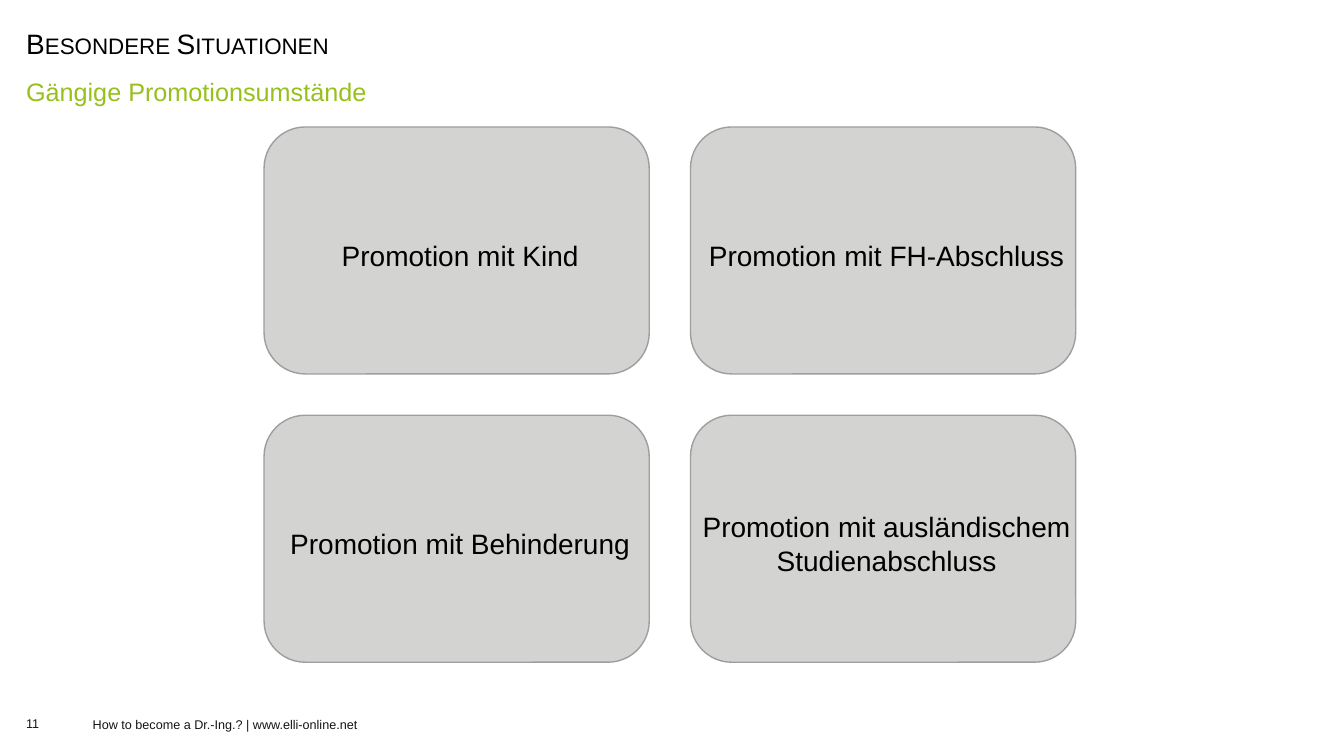
from dataclasses import dataclass

from pptx import Presentation
from pptx import util as u
from pptx.dml.color import RGBColor
from pptx.enum import shapes, text

WIDTH, HEIGHT = u.Inches(13.33), u.Inches(7.5)
FONT = "Arial"
BLACK, INK, GREEN = "000000", "141616", "98C01C"
CARD_FILL, CARD_LINE = "D3D3D1", "9C9E9F"


@dataclass(frozen=True)
class Area:
    """A rectangle in percent of the slide's width and height."""

    left: float
    top: float
    width: float
    height: float

    def lengths(self) -> tuple[int, int, int, int]:
        """Return the left, top, width and height as slide lengths."""
        return (
            round(WIDTH * self.left / 100),
            round(HEIGHT * self.top / 100),
            round(WIDTH * self.width / 100),
            round(HEIGHT * self.height / 100),
        )


@dataclass(frozen=True)
class Card:
    """A situation and its cell in the card grid."""

    label: str
    column: int
    row: int


@dataclass(frozen=True)
class Label:
    """A line of text with its place and look."""

    wording: str
    area: Area
    size: float
    color: str
    inset: tuple[float, float] = (0, 0)
    anchor: text.MSO_ANCHOR = text.MSO_ANCHOR.MIDDLE
    line_spacing: float = 1.0


FIRST_CARD = Area(19.65, 16.8, 28.66, 32.67)
COLUMN_STEP, ROW_STEP = 31.73, 38.13
CARDS = [
    Card("Promotion mit Kind", 0, 0),
    Card("Promotion mit FH-Abschluss", 1, 0),
    Card("Promotion mit Behinderung", 0, 1),
    Card("Promotion mit ausländischem\nStudienabschluss", 1, 1),
]
TITLE = Label("Besondere Situationen", Area(1.2, 2.93, 70.29, 5.2), 20, BLACK,
              inset=(0.1, 0.05), line_spacing=1.1)
LABELS = [
    Label("Gängige Promotionsumstände", Area(1.2, 9.07, 97.67, 5.2), 18, GREEN,
          inset=(0.1, 0.05), anchor=text.MSO_ANCHOR.TOP, line_spacing=1.1),
    Label("11", Area(1.95, 93.2, 3.75, 5.07), 9, INK),
    Label("How to become a Dr.-Ing.? | www.elli-online.net",
          Area(6.9, 93.33, 56.71, 4.93), 9, INK),
]


def rgb(value: str) -> RGBColor:
    """Turn a hex string into a colour."""
    return RGBColor.from_string(value)


def write(frame, wording: str, size: float, color: str, align, spacing: float = 1.0) -> None:
    """Fill a text frame and format its runs."""
    frame.text = wording
    for para in frame.paragraphs:
        para.alignment = align
        para.line_spacing = spacing
        for span in para.runs:
            span.font.name = FONT
            span.font.size = u.Pt(size)
            span.font.color.rgb = rgb(color)


def set_label(box, label: Label) -> None:
    """Place a box and give it the label's text."""
    box.left, box.top, box.width, box.height = label.area.lengths()
    frame = box.text_frame
    frame.word_wrap = True
    frame.auto_size = text.MSO_AUTO_SIZE.NONE
    frame.vertical_anchor = label.anchor
    frame.margin_left = frame.margin_right = u.Inches(label.inset[0])
    frame.margin_top = frame.margin_bottom = u.Inches(label.inset[1])
    write(frame, label.wording, label.size, label.color,
          text.PP_ALIGN.LEFT, label.line_spacing)


def add_title(page) -> None:
    """Format the title placeholder in small capitals."""
    title = page.shapes.title
    set_label(title, TITLE)
    for span in title.text_frame.paragraphs[0].runs:
        span.font._element.set("cap", "small")


def add_card(page, card: Card) -> None:
    """Draw a rounded card in its grid cell."""
    area = Area(FIRST_CARD.left + card.column * COLUMN_STEP,
                FIRST_CARD.top + card.row * ROW_STEP,
                FIRST_CARD.width, FIRST_CARD.height)
    box = page.shapes.add_shape(shapes.MSO_SHAPE.ROUNDED_RECTANGLE, *area.lengths())
    box.shadow.inherit = False
    box.fill.solid()
    box.fill.fore_color.rgb = rgb(CARD_FILL)
    box.line.color.rgb = rgb(CARD_LINE)
    box.line.width = u.Pt(1)
    frame = box.text_frame
    frame.word_wrap = False
    frame.vertical_anchor = text.MSO_ANCHOR.MIDDLE
    frame.margin_left, frame.margin_top = u.Inches(0.07), u.Inches(0.09)
    frame.margin_right = frame.margin_bottom = 0
    write(frame, card.label, 20, BLACK, text.PP_ALIGN.CENTER)


def main() -> None:
    """Build the slide and save the deck."""
    deck = Presentation()
    deck.slide_width, deck.slide_height = WIDTH, HEIGHT
    page = deck.slides.add_slide(deck.slide_layouts[5])
    add_title(page)
    for label in LABELS:
        set_label(page.shapes.add_textbox(*label.area.lengths()), label)
    for card in CARDS:
        add_card(page, card)
    deck.save("out.pptx")


if __name__ == "__main__":
    main()
